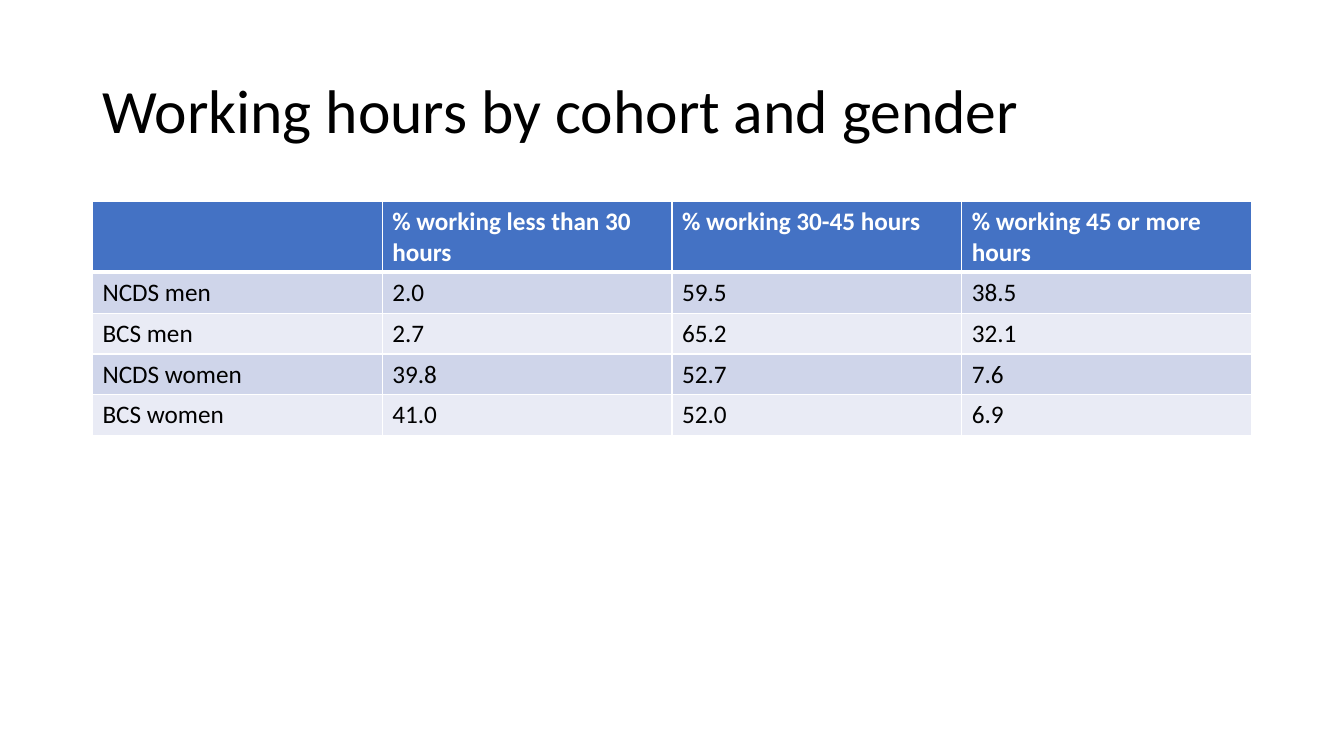
from lxml.etree import SubElement
from pptx import Presentation
from pptx.dml.color import RGBColor
from pptx.enum.text import MSO_ANCHOR as Anchor
from pptx.oxml.ns import qn
from pptx.util import Cm, Pt

FONT = "Calibri"
BLACK, WHITE = "000000", "FFFFFF"
HEADER_FILL = "4472C4"
BAND_FILLS = ["CFD5EA", "E9EBF5"]

HOURS = [
    ["", "% working less than 30 hours", "% working 30-45 hours", "% working 45 or more hours"],
    ["NCDS men", "2.0", "59.5", "38.5"],
    ["BCS men", "2.7", "65.2", "32.1"],
    ["NCDS women", "39.8", "52.7", "7.6"],
    ["BCS women", "41.0", "52.0", "6.9"],
]


def color(hex_code):
    return RGBColor.from_string(hex_code)


def format_runs(paragraph, size, hex_code, bold=False):
    for run in paragraph.runs:
        run.font.name = FONT
        run.font.size = Pt(size)
        run.font.bold = bold
        run.font.color.rgb = color(hex_code)


def set_borders(cell, widths):
    """Give a cell white borders, widths in points by side."""
    properties = cell._tc.get_or_add_tcPr()
    for side, width in widths.items():
        line = SubElement(properties, qn(f"a:ln{side}"), w=str(Pt(width)))
        fill = SubElement(line, qn("a:solidFill"))
        SubElement(fill, qn("a:srgbClr"), val=WHITE)


def add_title(slide, text, left, top, width, height):
    title = slide.shapes.add_textbox(Cm(left), Cm(top), Cm(width), Cm(height))
    frame = title.text_frame
    frame.word_wrap = True
    frame.vertical_anchor = Anchor.MIDDLE
    frame.text = text
    frame.paragraphs[0].line_spacing = 0.9
    format_runs(frame.paragraphs[0], 44, BLACK)


def add_hours_table(slide, rows, left, top, width, header_height, row_height):
    height = header_height + row_height * (len(rows) - 1)
    hours = slide.shapes.add_table(
        len(rows), len(rows[0]), Cm(left), Cm(top), Cm(width), Cm(height)
    ).table

    # Equal columns, taller header row
    for column in hours.columns:
        column.width = Cm(width / len(rows[0]))
    for index, row in enumerate(hours.rows):
        row.height = Cm(row_height if index else header_height)

    # Cells: blue header, then alternating bands
    for r, values in enumerate(rows):
        is_header = r == 0
        fill = HEADER_FILL if is_header else BAND_FILLS[(r - 1) % 2]
        # The rule under the header is heavier and shared by both rows
        borders = {"L": 1, "R": 1, "T": 3 if r == 1 else 1, "B": 3 if is_header else 1}
        for c, value in enumerate(values):
            cell = hours.cell(r, c)
            set_borders(cell, borders)
            cell.fill.solid()
            cell.fill.fore_color.rgb = color(fill)
            cell.text_frame.text = value
            format_runs(cell.text_frame.paragraphs[0], 18,
                        WHITE if is_header else BLACK, bold=is_header)


def main():
    deck = Presentation()
    deck.slide_width, deck.slide_height = Cm(33.87), Cm(19.05)
    slide = deck.slides.add_slide(deck.slide_layouts[6])

    left, width = 2.33, 29.21
    add_title(slide, "Working hours by cohort and gender", left, 1.01, width, 3.68)
    add_hours_table(slide, HOURS, left, 5.08, width, header_height=1.78, row_height=1.03)

    deck.save("out.pptx")


if __name__ == "__main__":
    main()
